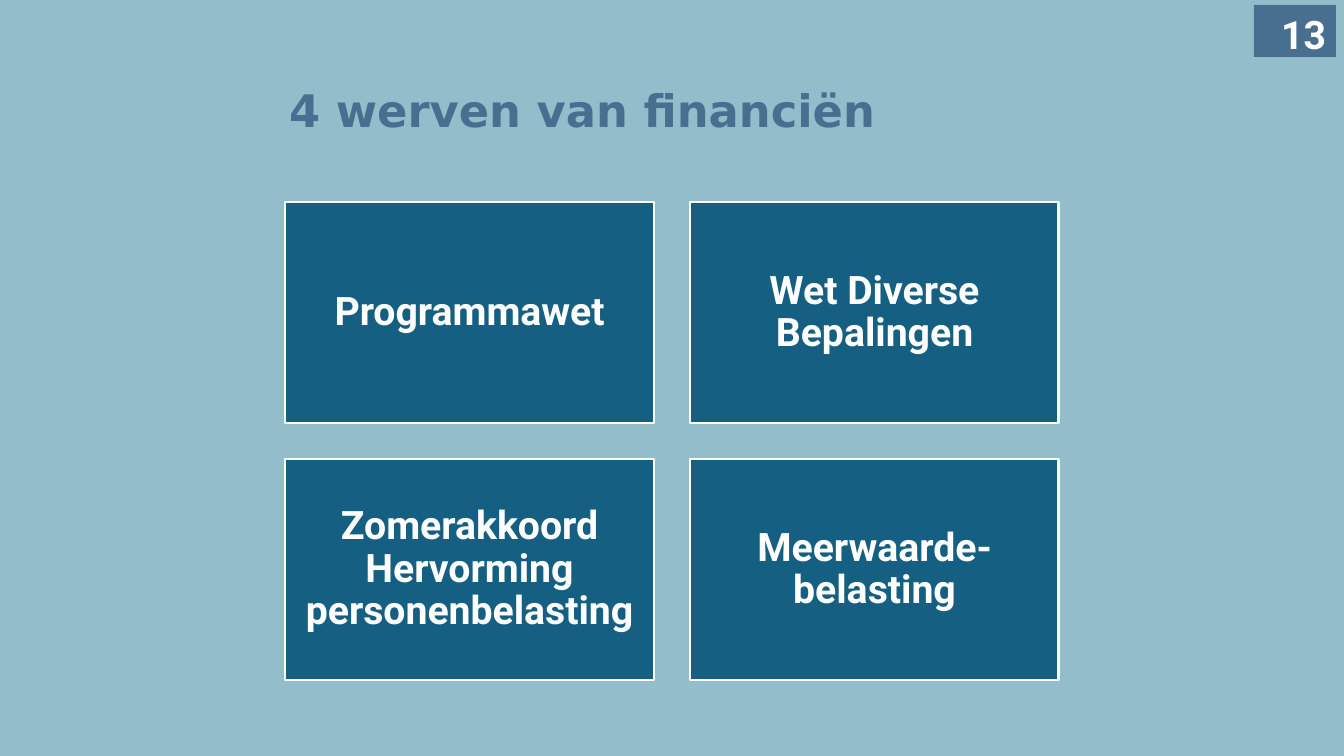
"""Build a slide with four finance projects in a two by two grid."""
from pptx import Presentation
from pptx.dml.color import RGBColor
from pptx.enum.shapes import MSO_SHAPE
from pptx.enum.text import MSO_ANCHOR, PP_ALIGN
from pptx.util import Pt

EMU_PER_PX = 914400 / 100.8
COLORS = {
    "background": "94BDCC",
    "accent": "496F90",
    "card": "156082",
    "white": "FFFFFF",
}
PROJECTS = [
    "Programmawet",
    "Wet Diverse Bepalingen",
    "Zomerakkoord Hervorming personenbelasting",
    "Meerwaarde-belasting",
]
COLUMNS = 2
GRID_LEFT, GRID_TOP = 285, 202
CARD_WIDTH, CARD_HEIGHT = 369, 221
CARD_GAP = 36


def px(length):
    return round(length * EMU_PER_PX)


def color(name):
    return RGBColor.from_string(COLORS[name])


def format_text(paragraph, size, font_name, color_name, alignment):
    paragraph.alignment = alignment
    for run in paragraph.runs:
        run.font.size = Pt(size)
        run.font.name = font_name
        run.font.bold = True
        run.font.color.rgb = color(color_name)


def add_title(slide, text):
    title = slide.shapes.title
    title.left, title.top = px(279), px(40)
    title.width, title.height = px(1159), px(146)
    text_frame = title.text_frame
    text_frame.text = text
    text_frame.vertical_anchor = MSO_ANCHOR.MIDDLE
    paragraph = text_frame.paragraphs[0]
    paragraph.line_spacing = 0.9
    format_text(paragraph, 32, "DejaVu Sans", "accent", PP_ALIGN.LEFT)


def add_box(slide, text, left, top, width, height, fill, alignment):
    shape = slide.shapes.add_shape(
        MSO_SHAPE.RECTANGLE, px(left), px(top), px(width), px(height))
    shape.shadow.inherit = False
    shape.fill.solid()
    shape.fill.fore_color.rgb = color(fill)
    shape.line.fill.background()
    shape.text_frame.word_wrap = True
    shape.text_frame.text = text
    format_text(shape.text_frame.paragraphs[0], 28, "Roboto", "white", alignment)
    return shape


def add_card(slide, text, index):
    row, column = divmod(index, COLUMNS)
    left = GRID_LEFT + column * (CARD_WIDTH + CARD_GAP)
    top = GRID_TOP + row * (CARD_HEIGHT + CARD_GAP)
    card = add_box(slide, text, left, top, CARD_WIDTH, CARD_HEIGHT,
                   "card", PP_ALIGN.CENTER)
    card.line.color.rgb = color("white")
    card.line.width = Pt(2)
    text_frame = card.text_frame
    text_frame.vertical_anchor = MSO_ANCHOR.MIDDLE
    text_frame.margin_left = text_frame.margin_right = px(12)
    text_frame.margin_top = text_frame.margin_bottom = px(12)
    text_frame.paragraphs[0].line_spacing = 0.9


def add_page_number(slide, number):
    badge = add_box(slide, number, 1254, 5, 82, 52, "accent", PP_ALIGN.RIGHT)
    badge.text_frame.vertical_anchor = MSO_ANCHOR.TOP


def main():
    presentation = Presentation()
    presentation.slide_width, presentation.slide_height = px(1344), px(756)
    slide = presentation.slides.add_slide(presentation.slide_layouts[5])
    slide.background.fill.solid()
    slide.background.fill.fore_color.rgb = color("background")
    add_title(slide, "4 werven van financiën")
    for index, project in enumerate(PROJECTS):
        add_card(slide, project, index)
    add_page_number(slide, "13")
    presentation.save("out.pptx")


if __name__ == "__main__":
    main()
